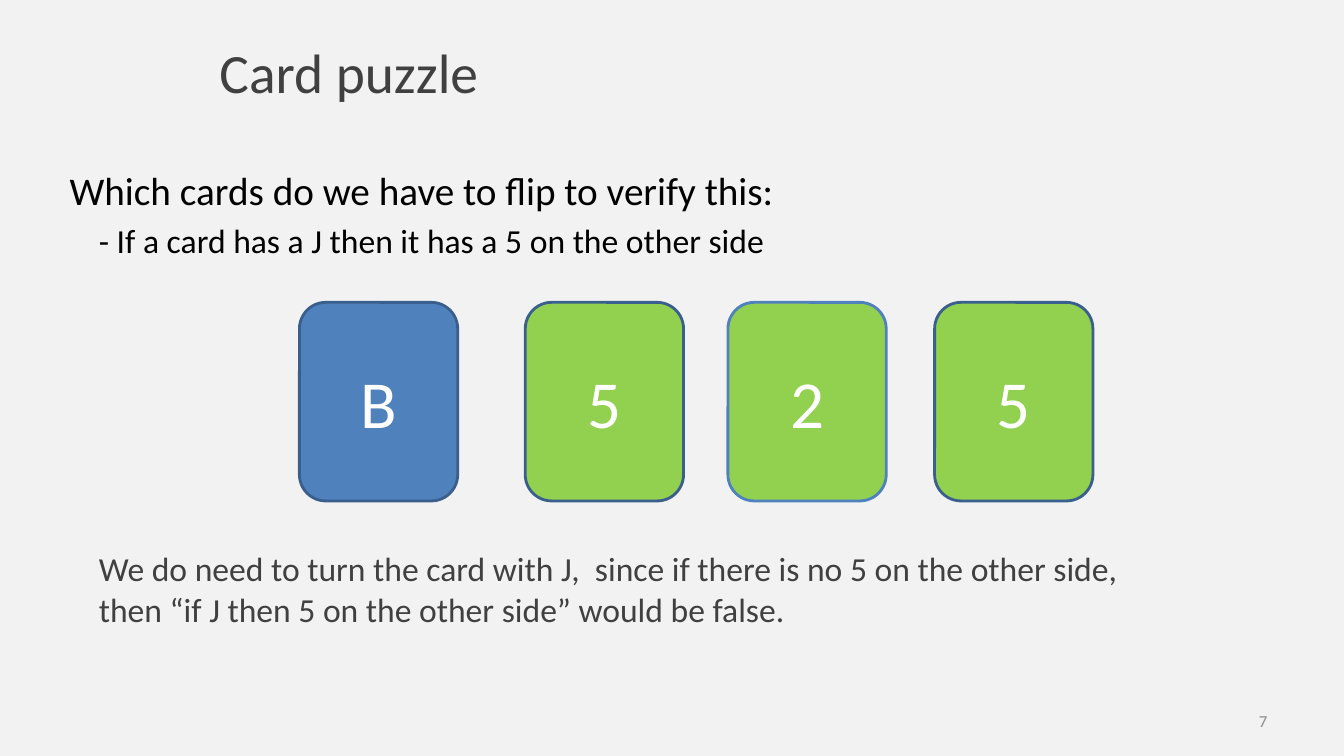
from dataclasses import dataclass

from lxml import etree
from pptx import Presentation
from pptx.dml.color import RGBColor
from pptx.enum.shapes import MSO_SHAPE
from pptx.enum.text import MSO_ANCHOR, MSO_AUTO_SIZE, PP_ALIGN
from pptx.oxml.ns import qn
from pptx.util import Inches, Pt

ROUNDED = MSO_SHAPE.ROUNDED_RECTANGLE
MIDDLE, TOP = MSO_ANCHOR.MIDDLE, MSO_ANCHOR.TOP
LEFT, CENTER, RIGHT = PP_ALIGN.LEFT, PP_ALIGN.CENTER, PP_ALIGN.RIGHT
NO_AUTOFIT = MSO_AUTO_SIZE.NONE

FONT = "Calibri"
BACKGROUND, BLACK, WHITE = "F2F2F2", "000000", "FFFFFF"
DARK_GRAY, LIGHT_GRAY = "404040", "8C8C8C"
BLUE, GREEN, NAVY = "4F81BD", "92D050", "3A5F8C"

CARD_TOP, CARD_WIDTH, CARD_HEIGHT = 3, 1.57, 1.97
SUB_INDENT = 0.29


@dataclass
class Card:
    face: str
    left: float
    fill: str = GREEN
    line: str = NAVY


CARDS = [
    Card("B", 2.97, fill=BLUE),
    Card("5", 5.21),
    Card("2", 7.22, line=BLUE),
    Card("5", 9.27),
]


def color(hex_code: str) -> RGBColor:
    return RGBColor.from_string(hex_code)


def place(shape, left: float, top: float, width: float, height: float, anchor=TOP):
    """Position a shape and return its wrapped, fixed-size text frame."""
    shape.left, shape.top = Inches(left), Inches(top)
    shape.width, shape.height = Inches(width), Inches(height)
    frame = shape.text_frame
    frame.word_wrap = True
    frame.auto_size = NO_AUTOFIT
    frame.vertical_anchor = anchor
    return frame


def write(paragraph, text: str, *, size: float, hex_code: str, align=LEFT,
          level: int = 0, space_before: float = 0) -> None:
    run = paragraph.add_run()
    run.text = text
    run.font.name = FONT
    run.font.size = Pt(size)
    run.font.color.rgb = color(hex_code)
    paragraph.alignment = align
    paragraph.level = level
    paragraph.space_before = Pt(space_before)


def write_body(paragraph, text: str, *, size: float, hex_code: str, level: int) -> None:
    """Write a body paragraph without a bullet, indented by its level."""
    write(paragraph, text, size=size, hex_code=hex_code, level=level,
          space_before=size * 0.2)
    properties = paragraph._p.get_or_add_pPr()
    properties.set("marL", str(Inches(SUB_INDENT * level)))
    properties.set("indent", "0")
    etree.SubElement(properties, qn("a:buNone"))


def draw_card(slide, card: Card) -> None:
    shape = slide.shapes.add_shape(ROUNDED, 0, 0, 0, 0)
    frame = place(shape, card.left, CARD_TOP, CARD_WIDTH, CARD_HEIGHT, MIDDLE)
    shape.shadow.inherit = False
    shape.fill.solid()
    shape.fill.fore_color.rgb = color(card.fill)
    shape.line.color.rgb = color(card.line)
    shape.line.width = Pt(2)
    write(frame.paragraphs[0], card.face, size=48, hex_code=WHITE, align=CENTER)


def main() -> None:
    presentation = Presentation()
    presentation.slide_width, presentation.slide_height = Inches(13.33), Inches(7.5)
    two_content = presentation.slide_layouts[3]
    slide = presentation.slides.add_slide(two_content)
    slide.background.fill.solid()
    slide.background.fill.fore_color.rgb = color(BACKGROUND)

    title = place(slide.shapes.title, 0.47, 0.47, 5.98, 0.47, MIDDLE)
    write(title.paragraphs[0], "Card puzzle", size=39.6, hex_code=DARK_GRAY, align=CENTER)

    question = place(slide.placeholders[1], 0.59, 1.6, 11.21, 1.01)
    write_body(question.paragraphs[0], "Which cards do we have to flip to verify this:",
               size=28, hex_code=BLACK, level=0)
    write_body(question.add_paragraph(),
               "- If a card has a J then it has a 5 on the other side",
               size=24, hex_code=BLACK, level=1)

    answer = place(slide.placeholders[2], 0.59, 5.39, 10.62, 1.48)
    write_body(answer.paragraphs[0],
               "We do need to turn the card with J,  since if there is no 5 on the other side, "
               "then “if J then 5 on the other side” would be false.",
               size=24, hex_code=DARK_GRAY, level=1)

    page_number = place(slide.shapes.add_textbox(0, 0, 0, 0), 9.56, 6.95, 3.11, 0.4, MIDDLE)
    write(page_number.paragraphs[0], "7", size=12, hex_code=LIGHT_GRAY, align=RIGHT)

    for card in CARDS:
        draw_card(slide, card)

    presentation.save("out.pptx")


if __name__ == "__main__":
    main()
